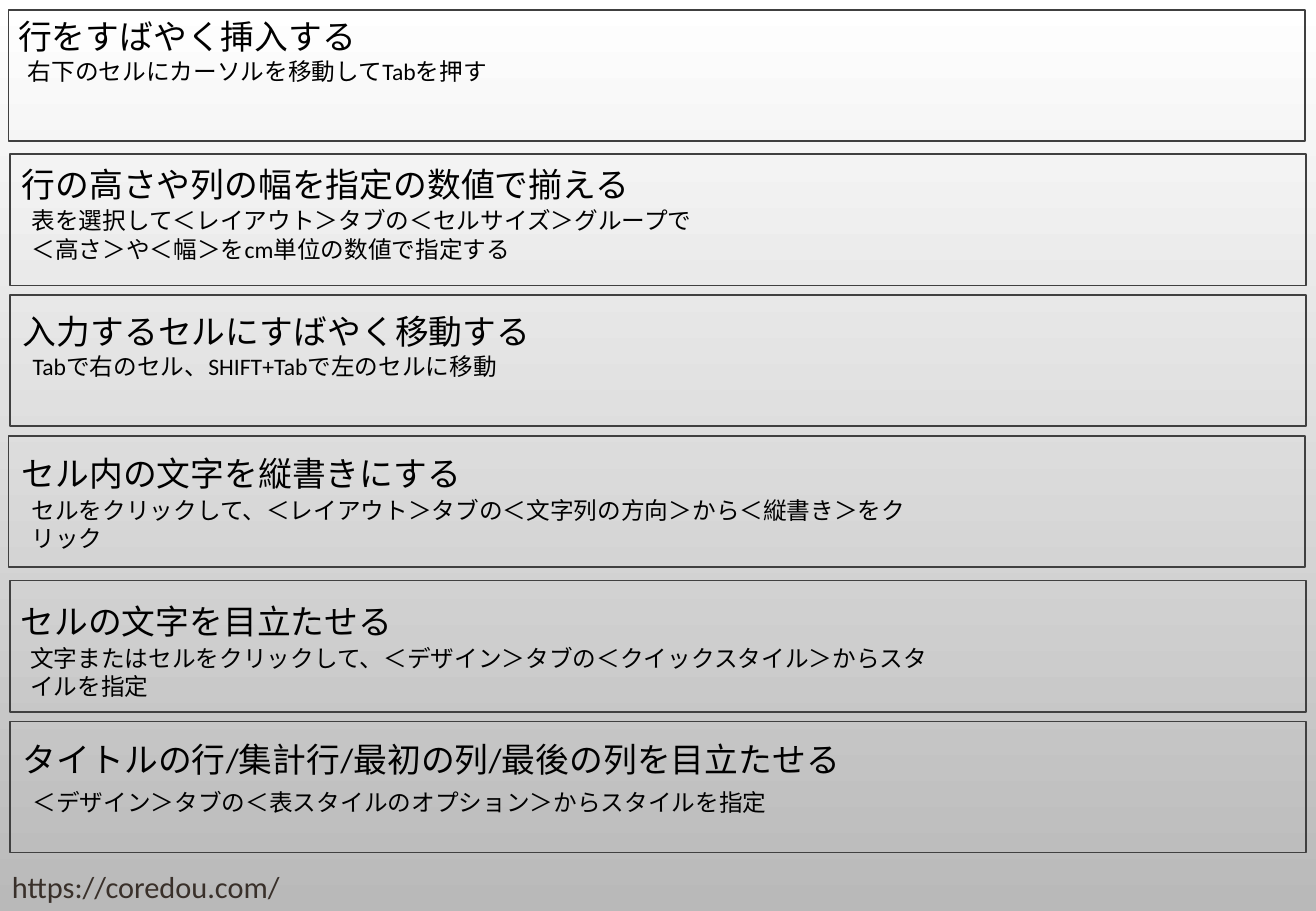
from collections import namedtuple

from pptx import Presentation
from pptx.dml.color import RGBColor
from pptx.enum.shapes import MSO_SHAPE as Shape
from pptx.enum.text import MSO_ANCHOR as Anchor, MSO_AUTO_SIZE as AutoSize
from pptx.util import Pt

PX = 9144
FONT = "Calibri"
WHITE = RGBColor(0xFF, 0xFF, 0xFF)
GRAY = RGBColor(0xB9, 0xB9, 0xB9)
BORDER = RGBColor(0x40, 0x40, 0x40)
BLACK = RGBColor(0, 0, 0)
BROWN = RGBColor(0x39, 0x30, 0x2A)

CARD_WIDTH, CARD_HEIGHT = 1067, 108
HEADING_HEIGHT, DETAIL_LINE, DETAIL_PADDING = 44, 23, 11
DETAIL_INDENT = 8

Tip = namedtuple("Tip", "left top heading detail heading_dx heading_dy detail_dy heading_width detail_width")

TIPS = [
    Tip(7, 8, "行をすばやく挿入する", "右下のセルにカーソルを移動してTabを押す",
        -2, 0, 34, 615, 738),
    Tip(8, 127, "行の高さや列の幅を指定の数値で揃える",
        "表を選択して＜レイアウト＞タブの＜セルサイズ＞グループで\n＜高さ＞や＜幅＞をcm単位の数値で指定する",
        0, 3, 35, 615, 738),
    Tip(8, 243, "入力するセルにすばやく移動する", "Tabで右のセル、SHIFT+Tabで左のセルに移動",
        1, 8, 34, 615, 445),
    Tip(7, 359, "セル内の文字を縦書きにする",
        "セルをクリックして、＜レイアウト＞タブの＜文字列の方向＞から＜縦書き＞をクリック",
        1, 9, 35, 615, 768),
    Tip(8, 478, "セルの文字を目立たせる",
        "文字またはセルをクリックして、＜デザイン＞タブの＜クイックスタイル＞からスタイルを指定",
        -1, 12, 35, 615, 768),
    Tip(8, 594, "タイトルの行/集計行/最初の列/最後の列を目立たせる",
        "＜デザイン＞タブの＜表スタイルのオプション＞からスタイルを指定",
        1, 9, 41, 752, 768),
]


def px(*lengths):
    return [length * PX for length in lengths]


def add_text(slide, box, text, size, color=BLACK, anchor=Anchor.TOP, fit=AutoSize.SHAPE_TO_FIT_TEXT):
    frame = slide.shapes.add_textbox(*px(*box)).text_frame
    frame.word_wrap = True
    frame.auto_size = fit
    frame.vertical_anchor = anchor
    frame.text = text
    for paragraph in frame.paragraphs:
        font = paragraph.runs[0].font
        font.name = FONT
        font.size = Pt(size)
        font.color.rgb = color


def add_background(slide):
    fill = slide.background.fill
    fill.gradient()
    fill.gradient_angle = 270
    for stop, position, color in zip(fill.gradient_stops, (0, 1), (WHITE, GRAY)):
        stop.position = position
        stop.color.rgb = color


def add_frame(slide, box):
    frame = slide.shapes.add_shape(Shape.RECTANGLE, *px(*box))
    frame.shadow.inherit = False
    frame.fill.background()
    frame.line.color.rgb = BORDER
    frame.line.width = Pt(1)


def add_tip(slide, box, tip):
    left, top, _, _ = box
    heading_left, heading_top = left + tip.heading_dx, top + tip.heading_dy
    detail_height = DETAIL_PADDING + DETAIL_LINE * len(tip.detail.split("\n"))
    add_text(slide, (heading_left, heading_top, tip.heading_width, HEADING_HEIGHT), tip.heading, size=20)
    add_text(slide, (heading_left + DETAIL_INDENT, heading_top + tip.detail_dy, tip.detail_width, detail_height),
             tip.detail, size=14)


def add_site_address(slide, box):
    add_text(slide, box, "https://coredou.com/", size=18, color=BROWN, anchor=Anchor.MIDDLE, fit=AutoSize.NONE)


def main():
    deck = Presentation()
    deck.slide_width, deck.slide_height = px(1083, 750)
    slide = deck.slides.add_slide(deck.slide_layouts[6])
    add_background(slide)
    add_site_address(slide, (0, 710, 347, 40))
    for tip in TIPS:
        box = (tip.left, tip.top, CARD_WIDTH, CARD_HEIGHT)
        add_frame(slide, box)
        add_tip(slide, box, tip)
    deck.save("out.pptx")


if __name__ == "__main__":
    main()
